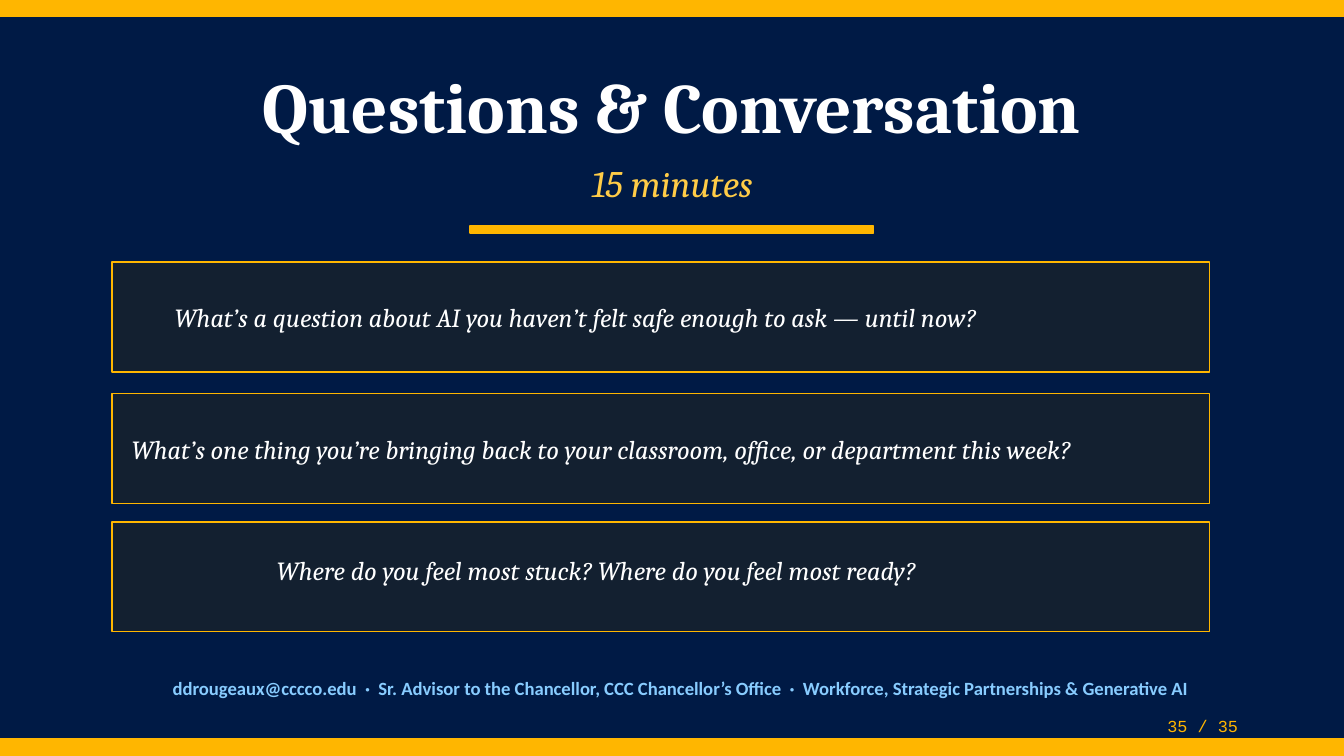
from pptx import Presentation
from pptx.dml.color import RGBColor
from pptx.enum.shapes import MSO_SHAPE
from pptx.enum.text import MSO_ANCHOR, PP_ALIGN
from pptx.util import Cm, Pt

WIDE, HIGH = 25.4, 14.29
HUES = {
    "navy": "001A45", "gold": "FFB600", "amber": "FFCC47",
    "slate": "132030", "white": "FFFFFF", "sky": "88CCFF",
}
CARDS = [
    ("What’s a question about AI you haven’t felt safe enough to ask — until now?",
     4.95, 0.94, 0),
    ("What’s one thing you’re bringing back to your classroom, office, or department this week?",
     7.44, 0.13, 0),
    ("Where do you feel most stuck? Where do you feel most ready?",
     9.86, 2.87, -0.13),
]
CONTACT = ("ddrougeaux@cccco.edu  ·  Sr. Advisor to the Chancellor, CCC Chancellor’s Office"
           "  ·  Workforce, Strategic Partnerships & Generative AI")


def hue(name):
    """Return the named colour."""
    return RGBColor.from_string(HUES[name])


def panel(slide, box, fill="gold"):
    """Draw a filled rectangle with a gold edge."""
    shape = slide.shapes.add_shape(MSO_SHAPE.RECTANGLE, *map(Cm, box))
    shape.shadow.inherit = False
    shape.fill.solid()
    shape.fill.fore_color.rgb = hue(fill)
    shape.line.color.rgb = hue("gold")
    shape.line.width = Pt(1)


def label(slide, box, text, size, color, font="Cambria",
          bold=False, italic=False, align=PP_ALIGN.CENTER):
    """Write one line of text, centred in height in its box."""
    frame = slide.shapes.add_textbox(*map(Cm, box)).text_frame
    frame.word_wrap = True
    frame.vertical_anchor = MSO_ANCHOR.MIDDLE
    frame.text = text
    line = frame.paragraphs[0]
    line.alignment = align
    face = line.runs[0].font
    face.name, face.size = font, Pt(size)
    face.bold, face.italic = bold, italic
    face.color.rgb = hue(color)


def header(slide, box):
    """Place the title, the time and the rule below them."""
    left, top, width, height = box
    label(slide, (left, top, width, 1.83), "Questions & Conversation", 38, "white", bold=True)
    label(slide, (left, top + 1.85, width, 1.07), "15 minutes", 20, "amber", italic=True)
    rule = 7.62
    panel(slide, (left + (width - rule) / 2, top + height - 0.13, rule, 0.13))


def card(slide, box, text, inset, shift):
    """Place a question in a framed card."""
    left, top, width, height = box
    panel(slide, box, "slate")
    label(slide, (left + inset, top + shift, width - inset - 0.13, height),
          text, 14, "white", italic=True, align=PP_ALIGN.LEFT)


def footer(slide, box):
    """Place the contact line and the page count."""
    left, top, width, height = box
    label(slide, (left, top, width, 0.76), CONTACT, 10, "sky", "Calibri", bold=True)
    label(slide, (20.57, top + height - 0.56, 4.32, 0.56), "35 / 35", 9, "gold", "Courier New")


def main():
    """Build and save the deck."""
    deck = Presentation()
    deck.slide_width, deck.slide_height = Cm(WIDE), Cm(HIGH)
    slide = deck.slides.add_slide(deck.slide_layouts[6])
    slide.background.fill.solid()
    slide.background.fill.fore_color.rgb = hue("navy")
    for top in (0, 13.97):
        panel(slide, (0, top, WIDE, 0.3))
    header(slide, (2.54, 1.07, 20.32, 3.33))
    for text, top, inset, shift in CARDS:
        card(slide, (2.11, top, 20.75, 2.08), text, inset, shift)
    footer(slide, (1.42, 12.62, 22.86, 1.38))
    deck.save("out.pptx")


if __name__ == "__main__":
    main()
